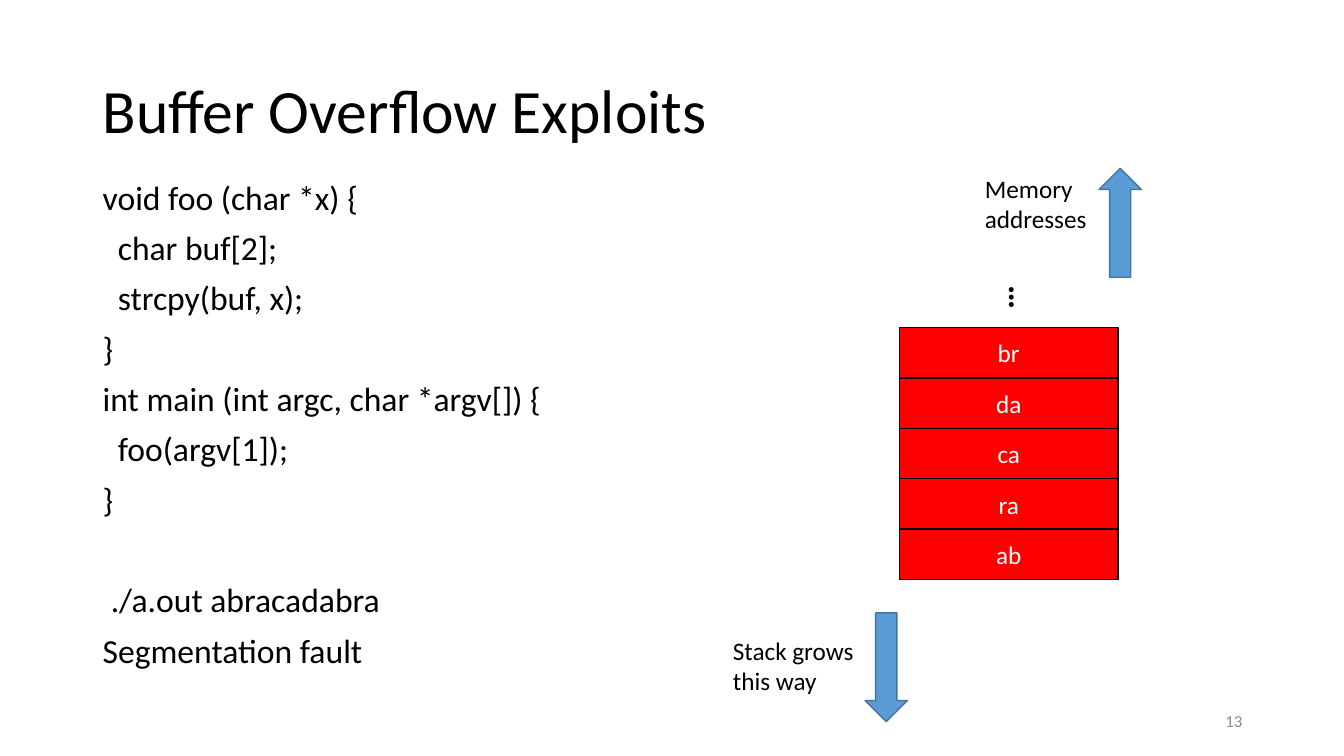
"""Build a slide that shows how a buffer overflow fills the stack."""
from dataclasses import dataclass

from pptx import Presentation
from pptx.dml.color import RGBColor
from pptx.enum.shapes import MSO_SHAPE as Shape
from pptx.enum.text import MSO_ANCHOR as Anchor, PP_ALIGN as Align
from pptx.util import Pt

PX = 9144
FONT = "Calibri"
COLORS = {
    "text": "000000",
    "white": "FFFFFF",
    "page": "8C8C8C",
    "cell": "FF0000",
    "arrow": "5B9BD5",
    "edge": "43739E",
}


@dataclass(frozen=True)
class Box:
    left: int
    top: int
    width: int
    height: int

    def emu(self) -> tuple[int, int, int, int]:
        return self.left * PX, self.top * PX, self.width * PX, self.height * PX


@dataclass(frozen=True)
class Row:
    text: str
    indent: int = 0
    before: int = 0


@dataclass(frozen=True)
class Label:
    box: Box
    rows: tuple[Row, ...]
    size: int = 18
    color: str = "text"
    bold: bool = False
    wrap: bool = False
    anchor: Anchor = Anchor.TOP
    align: Align = Align.LEFT
    spacing: float = 1.0
    turn: int = 0


@dataclass(frozen=True)
class Block:
    box: Box
    kind: Shape
    fill: str
    edge: str
    text: str = ""


TAB = 15
GAP = 10
CODE = (
    Row("void foo (char *x) {", 0, GAP),
    Row("char buf[2];", TAB, GAP),
    Row("strcpy(buf, x);", TAB, GAP),
    Row("}", 0, GAP),
    Row("int main (int argc, char *argv[]) {", 0, GAP),
    Row("foo(argv[1]);", TAB, GAP),
    Row("}", 0, GAP),
    Row("./a.out abracadabra", 8, 46),
    Row("Segmentation fault", 0, GAP),
)
LABELS = (
    Label(Box(92, 40, 1150, 145), (Row("Buffer Overflow Exploits"),), 44,
          wrap=True, anchor=Anchor.MIDDLE, spacing=0.9),
    Label(Box(92, 175, 575, 500), CODE, 24, wrap=True, spacing=0.9),
    Label(Box(717, 625, 152, 71), (Row("Stack grows"), Row("this way"))),
    Label(Box(967, 167, 124, 71), (Row("Memory"), Row("addresses"))),
    Label(Box(970, 270, 44, 50), (Row("…"),), 24, bold=True, turn=270),
    Label(Box(942, 695, 300, 40), (Row("13"),), 12, "page", wrap=True,
          anchor=Anchor.MIDDLE, align=Align.RIGHT),
)
ARROWS = (
    Block(Box(858, 608, 42, 108), Shape.DOWN_ARROW, "arrow", "edge"),
    Block(Box(1090, 167, 42, 108), Shape.UP_ARROW, "arrow", "edge"),
)
CELLS = tuple(
    Block(Box(892, 325 + 50 * i, 217, 50), Shape.RECTANGLE, "cell", "text", text)
    for i, text in enumerate(("br", "da", "ca", "ra", "ab"))
)


def tint(name: str) -> RGBColor:
    return RGBColor.from_string(COLORS[name])


def style(para, size: int, color: str, bold: bool = False) -> None:
    font = para.font
    font.name = FONT
    font.size = Pt(size)
    font.bold = bold
    font.color.rgb = tint(color)


def draw_label(slide, label: Label) -> None:
    shape = slide.shapes.add_textbox(*label.box.emu())
    shape.rotation = label.turn
    frame = shape.text_frame
    frame.word_wrap = label.wrap
    frame.vertical_anchor = label.anchor
    for i, row in enumerate(label.rows):
        para = frame.add_paragraph() if i else frame.paragraphs[0]
        para.text = row.text
        para.alignment = label.align
        para.line_spacing = label.spacing
        para.space_before = Pt(row.before)
        if row.indent:
            para._p.get_or_add_pPr().set("marL", str(row.indent * PX))
        style(para, label.size, label.color, label.bold)


def draw_block(slide, block: Block) -> None:
    shape = slide.shapes.add_shape(block.kind, *block.box.emu())
    shape.shadow.inherit = False
    shape.fill.solid()
    shape.fill.fore_color.rgb = tint(block.fill)
    shape.line.color.rgb = tint(block.edge)
    shape.line.width = Pt(1)
    if block.text:
        frame = shape.text_frame
        frame.vertical_anchor = Anchor.MIDDLE
        para = frame.paragraphs[0]
        para.text = block.text
        para.alignment = Align.CENTER
        style(para, 18, "white")


def main() -> None:
    deck = Presentation()
    deck.slide_width = 1333 * PX
    deck.slide_height = 750 * PX
    slide = deck.slides.add_slide(deck.slide_layouts[6])
    for block in ARROWS + CELLS:
        draw_block(slide, block)
    for label in LABELS:
        draw_label(slide, label)
    deck.save("out.pptx")


if __name__ == "__main__":
    main()
